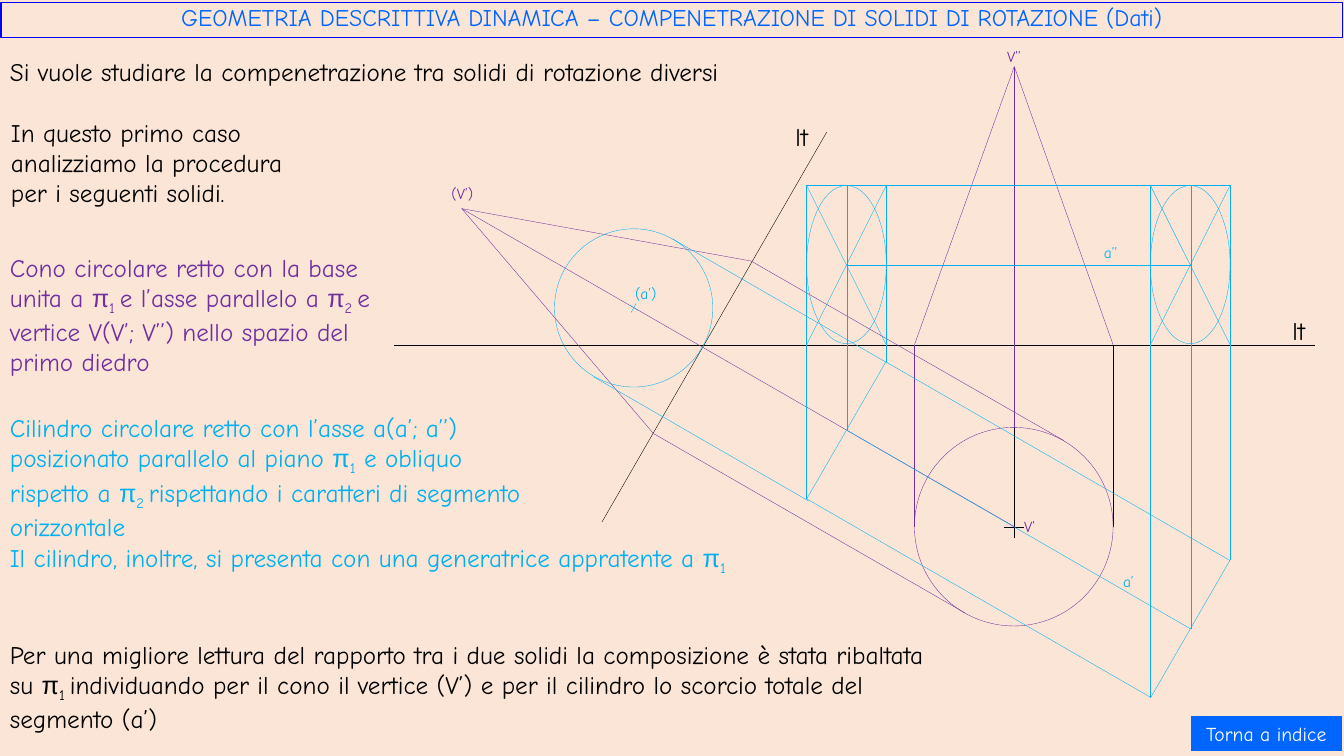
from lxml.etree import SubElement
from pptx import Presentation
from pptx.dml.color import RGBColor
from pptx.enum.shapes import MSO_CONNECTOR as LINK, MSO_SHAPE as SHAPE
from pptx.enum.text import MSO_ANCHOR as ANCHOR, MSO_AUTO_SIZE as FIT, PP_ALIGN as ALIGN
from pptx.oxml.ns import qn
from pptx.util import Pt

PX = 9144  # 100 px to the inch
BLACK, PURPLE, CYAN, BLUE = "000000", "7030A0", "00B0F0", "0066FF"
FONT = "Comic Neue"
HAIRLINE = 0.25

GROUND = 342  # ground line lt
CONE_LEFT, CONE_AXIS, CONE_RIGHT = 907, 1006, 1104
APEX = (CONE_AXIS, 66)
FOLDED_APEX = (458, 207)
BASE_CENTRE_Y = 523
ROOF, AXIS_HEIGHT = 184, 263  # top and axis of the cylinder's elevation
END_SIZE = (79, 157)
PLAN_AXIS = (840, 427, 1181, 624)

CONE_LINES = [
    (CONE_LEFT, BASE_CENTRE_Y, CONE_LEFT, GROUND),
    (CONE_AXIS, 424, *APEX),
    (CONE_LEFT, GROUND, *APEX),
    (CONE_RIGHT, GROUND, *APEX),
    (745, 259, 1055, 437),
    (648, 430, 957, 608),
    (*FOLDED_APEX, 1007, BASE_CENTRE_Y),
    (*FOLDED_APEX, 745, 259),
    (*FOLDED_APEX, 648, 430),
]
CYLINDER_LINES = [
    (1221, ROOF, 800, ROOF),
    (840, AXIS_HEIGHT, 1181, AXIS_HEIGHT),
    (589, 374, 802, 497),
    (667, 237, 880, 360),
    (631, 301, 626, 310),
    (625, 303, 633, 308),
]
# x of each vertical projection line and the y where it meets the plan
PROJECTIONS = [(800, 495), (840, 427), (879, 359), (1141, 692), (1181, 624), (1220, 556)]
REFERENCE_LINES = [
    (391, GROUND, 1304, GROUND),
    (820, 131, 597, 518),
    (996, BASE_CENTRE_Y, 1016, BASE_CENTRE_Y),
    (CONE_AXIS, 424, CONE_AXIS, 534),
    (CONE_RIGHT, BASE_CENTRE_Y, CONE_RIGHT, GROUND),
]
POINT_LABELS = [
    ("(V’)", (438, 178, 47, 29), PURPLE),
    ("V’’", (989, 42, 42, 29), PURPLE),
    ("V’", (1006, 508, 42, 29), PURPLE),
    ("a’", (1104, 563, 47, 29), CYAN),
    ("a’’", (1085, 236, 47, 29), CYAN),
    ("(a’)", (620, 277, 47, 29), CYAN),
]
# π{n} stands for the plane π with n as its subscript
NOTES = [
    ("lt", (1272, 308, 60, 40), BLACK),
    ("lt", (779, 115, 60, 40), BLACK),
    ("Si vuole studiare la compenetrazione tra solidi di rotazione diversi",
     (0, 51, 820, 40), BLACK),
    ("In questo primo caso analizziamo la procedura per i seguenti solidi.",
     (1, 111, 311, 101), BLACK),
    ("Cono circolare retto con la base unita a π{1 }e l’asse parallelo a π{2 }e "
     "vertice V(V’; V’’) nello spazio del primo diedro", (0, 245, 389, 131), PURPLE),
    ("Cilindro circolare retto con l’asse a(a’; a’’) posizionato parallelo al piano "
     "π{1} e obliquo rispetto a π{2 }rispettando i caratteri di segmento orizzontale",
     (0, 404, 528, 131), CYAN),
    ("Il cilindro, inoltre, si presenta con una generatrice appratente a π{1}",
     (0, 533, 806, 40), CYAN),
    ("Per una migliore lettura del rapporto tra i due solidi la composizione è stata "
     "ribaltata su π{1 }individuando per il cono il vertice (V’) e per il cilindro lo "
     "scorcio totale del segmento (a’)", (0, 629, 938, 101), BLACK),
]


def rgb(value):
    return RGBColor.from_string(value)


def emu(box):
    return [length * PX for length in box]


def stroke(item, color, width=HAIRLINE):
    item.line.color.rgb = rgb(color)
    item.line.width = Pt(width)


def write(frame, text, size=18, color=BLACK, align=ALIGN.LEFT, anchor=ANCHOR.TOP,
          spacing=None, fit=FIT.NONE):
    """Fill the frame, setting each π{n} as Arial π with a subscript."""
    frame.word_wrap = True
    frame.auto_size = fit
    frame.vertical_anchor = anchor
    paragraph = frame.paragraphs[0]
    paragraph.alignment = align
    paragraph.line_spacing = spacing

    def add_run(words, typeface=FONT):
        run = paragraph.add_run()
        run.text = words
        run.font.name = typeface
        run.font.size = Pt(size)
        run.font.color.rgb = rgb(color)
        return run

    opening, *planes = text.split("π{")
    add_run(opening)
    for plane in planes:
        index, following = plane.split("}")
        add_run("π", "Arial")
        subscript = add_run(index)
        subscript.font._element.set("baseline", "-25000")
        if following:
            add_run(following)


def add_note(slide, text, box, **style):
    note = slide.shapes.add_textbox(*emu(box))
    write(note.text_frame, text, fit=FIT.SHAPE_TO_FIT_TEXT, **style)


def add_line(slide, ends, color):
    segment = slide.shapes.add_connector(LINK.STRAIGHT, *emu(ends))
    stroke(segment, color)
    SubElement(segment._element.spPr, qn("a:effectLst"))
    return segment


def add_outline(slide, kind, box, color, rotation=0):
    outline = slide.shapes.add_shape(kind, *emu(box))
    outline.shadow.inherit = False
    outline.fill.background()
    outline.rotation = rotation
    stroke(outline, color)
    return outline


def add_title(slide, text):
    title = slide.shapes.title
    title.left, title.top, title.width, title.height = emu((1, 2, 1331, 35))
    stroke(title, "0000FF", 0.75)
    write(title.text_frame, text, size=17, color=BLUE, align=ALIGN.CENTER,
          anchor=ANCHOR.MIDDLE, spacing=0.8)


def add_button(slide, text, box):
    button = slide.shapes.add_shape(SHAPE.ACTION_BUTTON_CUSTOM, *emu(box))
    button.shadow.inherit = False
    button.fill.solid()
    button.fill.fore_color.rgb = rgb(BLUE)
    button.line.fill.background()
    write(button.text_frame, text, size=14, color="FFFFFF", align=ALIGN.CENTER,
          anchor=ANCHOR.MIDDLE)


def add_cylinder_plan(slide):
    plan = add_outline(slide, SHAPE.RECTANGLE, (813, 447, 394, 157), CYAN, rotation=30)
    axis = add_line(slide, PLAN_AXIS, CYAN)
    axis.begin_connect(plan, 1)
    axis.end_connect(plan, 3)
    # joining ignores the rotation, so the ends are set on the turned sides
    axis.begin_x, axis.begin_y, axis.end_x, axis.end_y = emu(PLAN_AXIS)


def add_cylinder_end(slide, left):
    """Draw an end ellipse with the diagonals of its enclosing rectangle."""
    right = left + END_SIZE[0]
    add_outline(slide, SHAPE.OVAL, (left, ROOF, *END_SIZE), CYAN)
    add_line(slide, (left, ROOF, right, GROUND), CYAN)
    add_line(slide, (right, ROOF, left, GROUND), CYAN)


def main():
    deck = Presentation()
    deck.slide_width, deck.slide_height = emu((1333, 750))
    slide = deck.slides.add_slide(deck.slide_layouts[5])
    slide.background.fill.solid()
    slide.background.fill.fore_color.rgb = rgb("FBE5D6")

    add_title(slide, "GEOMETRIA DESCRITTIVA DINAMICA – "
                     "COMPENETRAZIONE DI SOLIDI DI ROTAZIONE (Dati)")

    for ends in REFERENCE_LINES:
        add_line(slide, ends, BLACK)
    add_outline(slide, SHAPE.OVAL, (907, 424, 197, 197), PURPLE)
    for ends in CONE_LINES:
        add_line(slide, ends, PURPLE)

    add_outline(slide, SHAPE.OVAL, (550, 227, 157, 157), CYAN)
    add_cylinder_plan(slide)
    for x, plan_y in PROJECTIONS:
        add_line(slide, (x, plan_y, x, ROOF), CYAN)
    for ends in CYLINDER_LINES:
        add_line(slide, ends, CYAN)
    for left in (800, 1141):
        add_cylinder_end(slide, left)

    for text, box, color in POINT_LABELS:
        add_note(slide, text, box, size=11, color=color)
    for text, box, color in NOTES:
        add_note(slide, text, box, color=color)
    add_button(slide, "Torna a indice", (1181, 710, 150, 35))
    deck.save("out.pptx")


if __name__ == "__main__":
    main()
